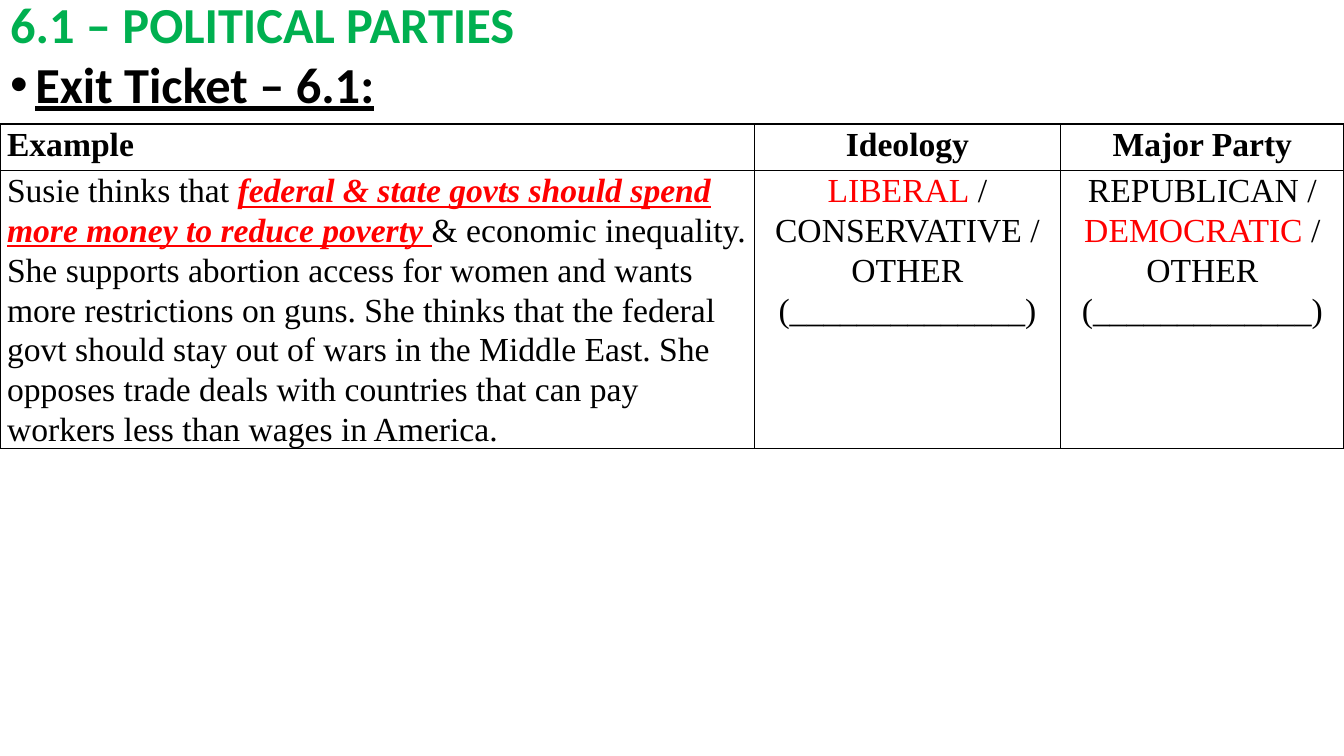
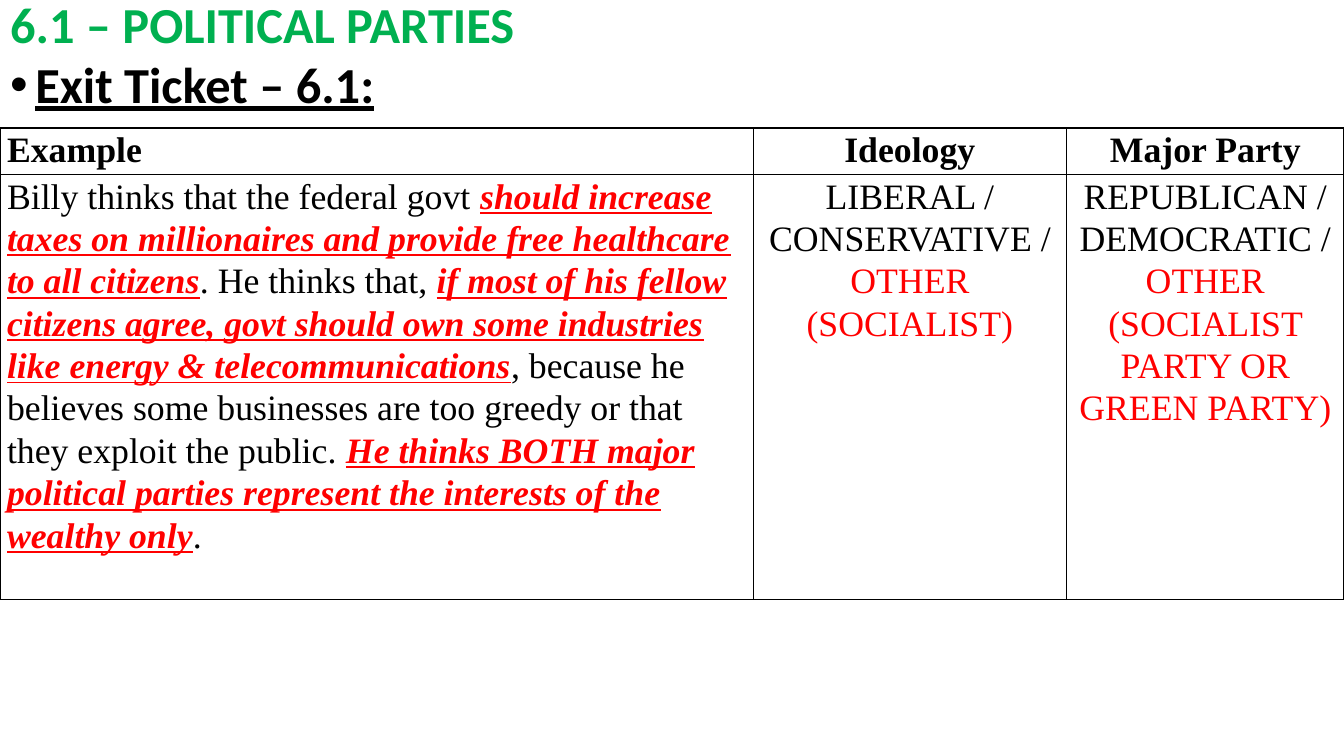
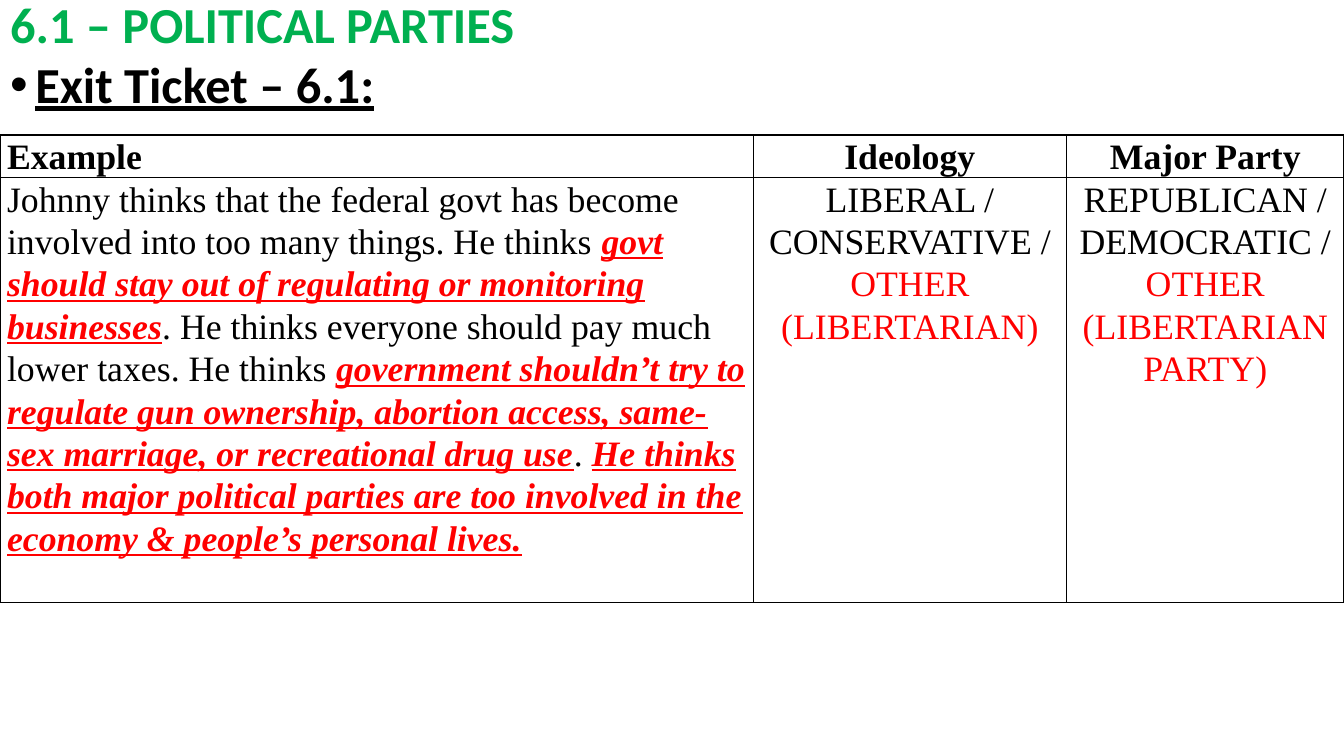
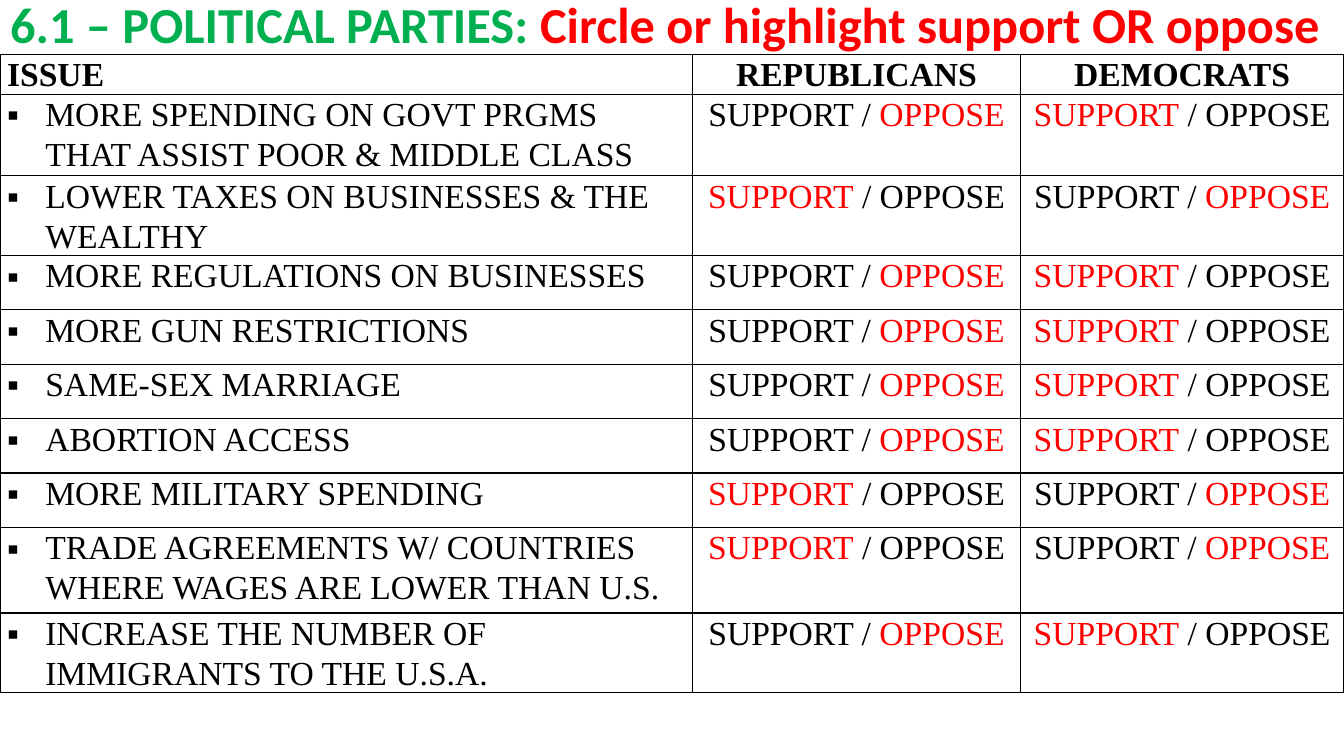
from dataclasses import dataclass

from lxml import etree
from pptx import Presentation
from pptx import util as u
from pptx.dml import color
from pptx.enum import text
from pptx.oxml import ns
from pptx.slide import Slide
from pptx.table import _Cell as Cell
from pptx.text import text as body_text

WIDTH, HEIGHT = 13.33, 7.5
TITLE_HEIGHT = 0.54
GREEN, RED, BLACK = "00B050", "FF0000", "000000"
HEADING_FONT, TABLE_FONT = "Calibri", "Times New Roman"
HEADING_SIZE = 36
TITLE = "6.1 – POLITICAL PARTIES"
CENTER = text.PP_ALIGN.CENTER
LEFT = text.PP_ALIGN.LEFT


@dataclass(frozen=True)
class Style:
    font: str
    size: float
    color: str = BLACK
    bold: bool = False
    italic: bool = False
    underline: bool = False


@dataclass(frozen=True)
class Grid:
    top: float
    columns: tuple[float, ...]
    rows: tuple[float, ...]
    size: float


@dataclass(frozen=True)
class Ticket:
    grid: Grid
    body_height: float
    example: str
    ideology: str
    party: str


@dataclass(frozen=True)
class Issue:
    name: str
    republicans_support: bool


TICKETS = (
    Ticket(
        Grid(1.23, (7.48, 3.04, 2.81), (0.46, 2.65), 24), 0.69,
        "Susie thinks that *federal & state govts should spend more money to reduce poverty *"
        "& economic inequality. She supports abortion access for women and wants more "
        "restrictions on guns. She thinks that the federal govt should stay out of wars in the "
        "Middle East. She opposes trade deals with countries that can pay workers less than "
        "wages in America.",
        "*LIBERAL* / CONSERVATIVE / OTHER (______________)",
        "REPUBLICAN / *DEMOCRATIC* / OTHER (_____________)",
    ),
    Ticket(
        Grid(1.27, (7.47, 3.11, 2.75), (0.46, 4.22), 25.5), 0.6,
        "Billy thinks that the federal govt *should increase taxes on millionaires and provide "
        "free healthcare to all citizens*. He thinks that, *if most of his fellow citizens "
        "agree, govt should own some industries like energy & telecommunications*, because he "
        "believes some businesses are too greedy or that they exploit the public. *He thinks "
        "BOTH major political parties represent the interests of the wealthy only*.",
        "LIBERAL / CONSERVATIVE / *OTHER (SOCIALIST)*",
        "REPUBLICAN / DEMOCRATIC / *OTHER (SOCIALIST PARTY OR GREEN PARTY)*",
    ),
    Ticket(
        Grid(1.34, (7.47, 3.11, 2.75), (0.35, 4.22), 25.5), 0.76,
        "Johnny thinks that the federal govt has become involved into too many things. He "
        "thinks *govt should stay out of regulating or monitoring businesses*. He thinks "
        "everyone should pay much lower taxes. He thinks *government shouldn’t try to regulate "
        "gun ownership, abortion access, same-sex marriage, or recreational drug use*. *He "
        "thinks both major political parties are too involved in the economy & people’s "
        "personal lives.*",
        "LIBERAL / CONSERVATIVE / *OTHER (LIBERTARIAN)*",
        "REPUBLICAN / DEMOCRATIC / *OTHER (LIBERTARIAN PARTY)*",
    ),
)

ISSUES = (
    Issue("MORE SPENDING ON GOVT PRGMS THAT ASSIST POOR & MIDDLE CLASS", False),
    Issue("LOWER TAXES ON BUSINESSES & THE WEALTHY", True),
    Issue("MORE REGULATIONS ON BUSINESSES", False),
    Issue("MORE GUN RESTRICTIONS", False),
    Issue("SAME-SEX MARRIAGE", False),
    Issue("ABORTION ACCESS", False),
    Issue("MORE MILITARY SPENDING", True),
    Issue("TRADE AGREEMENTS W/ COUNTRIES WHERE WAGES ARE LOWER THAN U.S.", True),
    Issue("INCREASE THE NUMBER OF IMMIGRANTS TO THE U.S.A.", False),
)
ISSUE_GRID = Grid(
    TITLE_HEIGHT, (6.87, 3.25, 3.21), (0.39, 0.81, *[0.54] * 6, 0.85, 0.54), 24
)


def rgb(value: str) -> color.RGBColor:
    return color.RGBColor.from_string(value)


def add_span(para: body_text._Paragraph, words: str, style: Style) -> None:
    span = para.add_run()
    span.text = words
    font = span.font
    font.name, font.size = style.font, u.Pt(style.size)
    font.bold, font.italic, font.underline = style.bold, style.italic, style.underline
    font.color.rgb = rgb(style.color)


def add_marked(para: body_text._Paragraph, words: str, plain: Style, marked: Style) -> None:
    for index, part in enumerate(words.split("*")):
        if part:
            add_span(para, part, marked if index % 2 else plain)


def set_bullet(para: body_text._Paragraph, sign: str, indent: float) -> None:
    properties = para._p.get_or_add_pPr()
    properties.set("marL", str(u.Inches(indent)))
    properties.set("indent", str(-u.Inches(indent)))
    etree.SubElement(properties, ns.qn("a:buFont")).set("typeface", "Arial")
    etree.SubElement(properties, ns.qn("a:buChar")).set("char", sign)


def prepare_placeholder(
    page: Slide, index: int, top: float, height: float, anchor: text.MSO_ANCHOR
) -> body_text._Paragraph:
    box = page.placeholders[index]
    box.left, box.top = u.Inches(0), u.Inches(top)
    box.width, box.height = u.Inches(WIDTH), u.Inches(height)
    frame = box.text_frame
    frame.word_wrap = True
    frame.auto_size = text.MSO_AUTO_SIZE.NONE
    frame.vertical_anchor = anchor
    para = frame.paragraphs[0]
    para.alignment = LEFT
    para.line_spacing = 0.9
    return para


def add_title(page: Slide, words: str) -> None:
    para = prepare_placeholder(page, 0, 0, TITLE_HEIGHT, text.MSO_ANCHOR.MIDDLE)
    green = Style(HEADING_FONT, HEADING_SIZE, GREEN, bold=True)
    red = Style(HEADING_FONT, HEADING_SIZE, RED, bold=True)
    add_marked(para, words, green, red)


def add_subtitle(page: Slide, words: str, height: float) -> None:
    para = prepare_placeholder(page, 1, TITLE_HEIGHT, height, text.MSO_ANCHOR.TOP)
    para.space_before = u.Pt(10)
    set_bullet(para, "•", 0.25)
    add_span(para, words, Style(HEADING_FONT, HEADING_SIZE, bold=True, underline=True))


def format_cell(cell: Cell) -> None:
    cell.margin_left = cell.margin_right = u.Inches(0.07)
    cell.margin_top = cell.margin_bottom = u.Inches(0)
    properties = cell._tc.get_or_add_tcPr()
    for side in ("a:lnL", "a:lnR", "a:lnT", "a:lnB"):
        border = etree.SubElement(properties, ns.qn(side))
        border.set("w", str(u.Pt(1)))
        fill = etree.SubElement(border, ns.qn("a:solidFill"))
        etree.SubElement(fill, ns.qn("a:srgbClr")).set("val", BLACK)
    cell.fill.background()


def add_grid(
    page: Slide, grid: Grid, rows: list[tuple[str, ...]], emphasis: bool, bullet: str = ""
) -> None:
    frame = page.shapes.add_table(
        len(grid.rows), len(grid.columns), u.Inches(0), u.Inches(grid.top),
        u.Inches(WIDTH), u.Inches(sum(grid.rows)),
    )
    table = frame.table
    table.first_row = table.horz_banding = False
    for column, width in zip(table.columns, grid.columns):
        column.width = u.Inches(width)
    for row, height in zip(table.rows, grid.rows):
        row.height = u.Inches(height)
    for row_index, words_row in enumerate(rows):
        for column_index, words in enumerate(words_row):
            header, first = row_index == 0, column_index == 0
            cell = table.cell(row_index, column_index)
            format_cell(cell)
            para = cell.text_frame.paragraphs[0]
            para.alignment = LEFT if first else CENTER
            para.line_spacing = 1.07
            if bullet and first and not header:
                set_bullet(para, bullet, 0.38)
            strong = emphasis and first
            plain = Style(TABLE_FONT, grid.size, bold=header)
            marked = Style(TABLE_FONT, grid.size, RED, strong, strong, strong)
            add_marked(para, words, plain, marked)


def stance(supports: bool) -> str:
    return "*SUPPORT* / OPPOSE" if supports else "SUPPORT / *OPPOSE*"


def add_ticket_page(deck: Presentation, ticket: Ticket) -> None:
    page = deck.slides.add_slide(deck.slide_layouts[1])
    add_title(page, TITLE)
    add_subtitle(page, "Exit Ticket – 6.1:", ticket.body_height)
    rows = [
        ("Example", "Ideology", "Major Party"),
        (ticket.example, ticket.ideology, ticket.party),
    ]
    add_grid(page, ticket.grid, rows, emphasis=True)


def add_issue_page(deck: Presentation) -> None:
    page = deck.slides.add_slide(deck.slide_layouts[5])
    add_title(page, f"{TITLE}: *Circle or highlight support OR oppose*")
    rows = [("ISSUE", "REPUBLICANS", "DEMOCRATS")]
    for issue in ISSUES:
        support = issue.republicans_support
        rows.append((issue.name, stance(support), stance(not support)))
    add_grid(page, ISSUE_GRID, rows, emphasis=False, bullet="▪")


def main() -> None:
    deck = Presentation()
    deck.slide_width, deck.slide_height = u.Inches(WIDTH), u.Inches(HEIGHT)
    for ticket in TICKETS:
        add_ticket_page(deck, ticket)
    add_issue_page(deck)
    deck.save("out.pptx")


if __name__ == "__main__":
    main()
